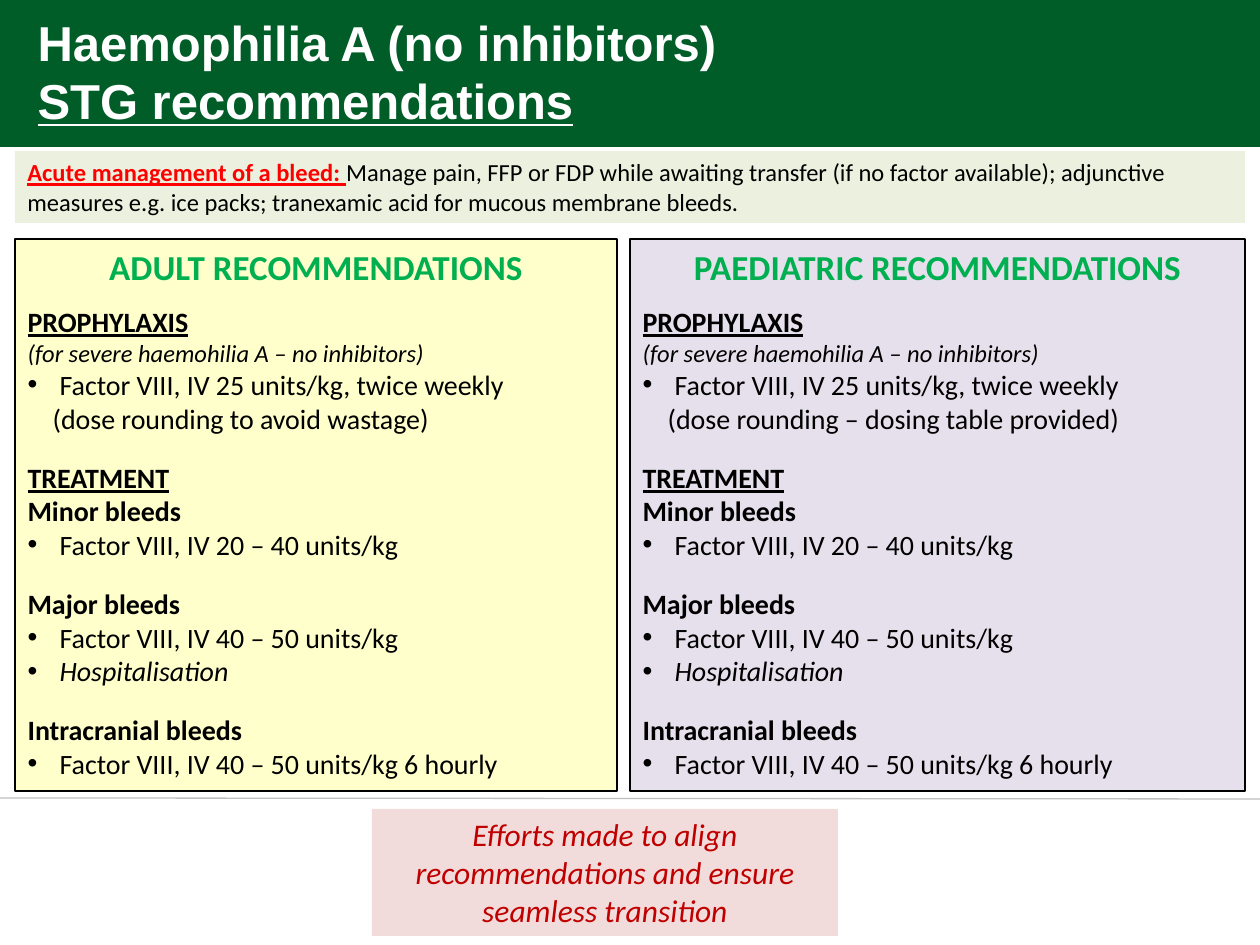
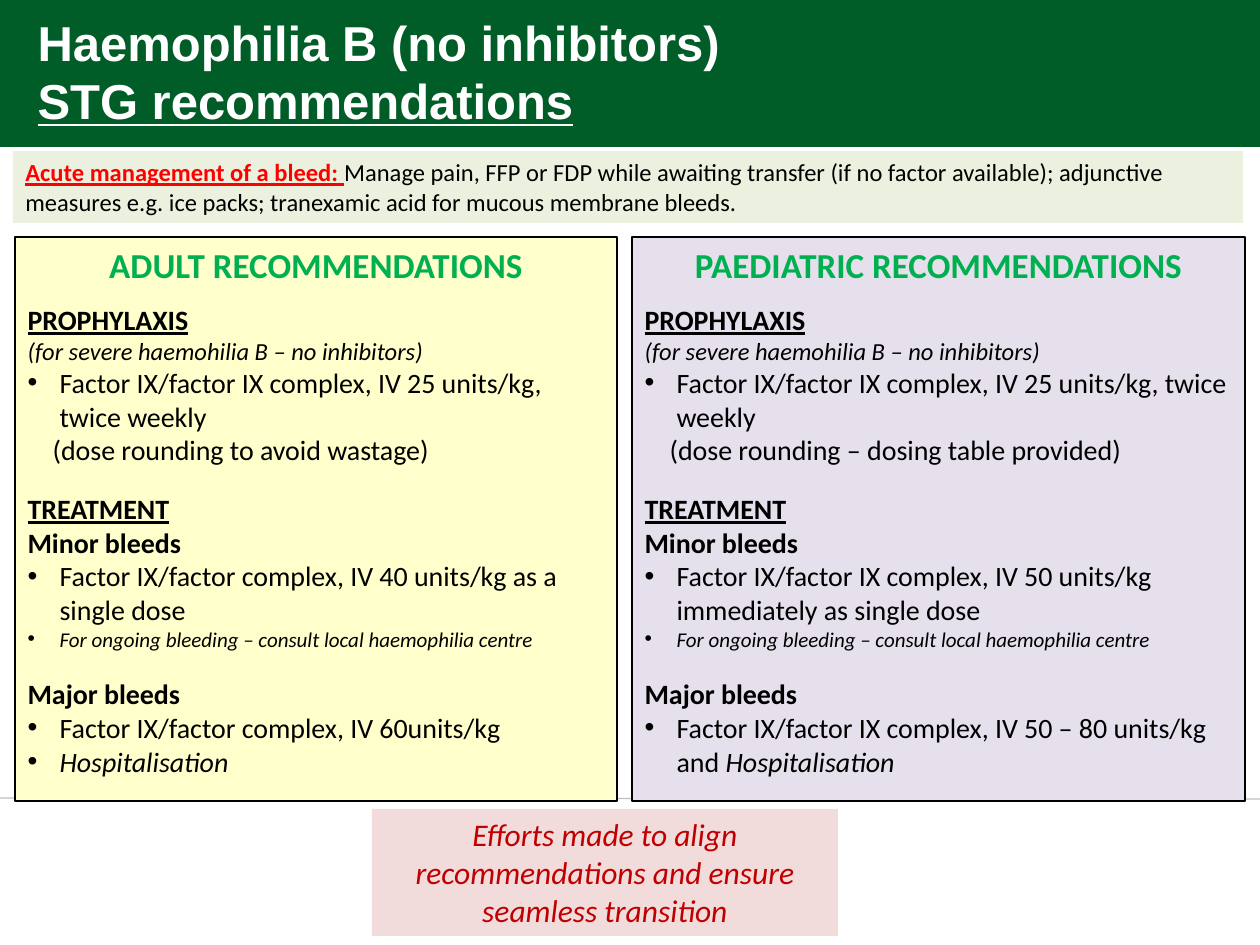
from dataclasses import dataclass

from lxml import etree
from pptx import Presentation
from pptx.dml.color import RGBColor
from pptx.enum.shapes import MSO_CONNECTOR, MSO_SHAPE
from pptx.enum.text import MSO_ANCHOR, MSO_AUTO_SIZE, PP_ALIGN
from pptx.oxml.ns import qn
from pptx.util import Emu, Pt

LEFT, CENTER = PP_ALIGN.LEFT, PP_ALIGN.CENTER
TOP, BOTTOM = MSO_ANCHOR.TOP, MSO_ANCHOR.BOTTOM
NO_AUTOSIZE = MSO_AUTO_SIZE.NONE
RECTANGLE, STRAIGHT = MSO_SHAPE.RECTANGLE, MSO_CONNECTOR.STRAIGHT

PX_PER_INCH = 126
SLIDE_W, SLIDE_H = 1260, 945
TWO_CONTENT = 3


@dataclass(frozen=True)
class Theme:
    band: str = "005D28"
    rule: str = "BFBFBF"
    white: str = "FFFFFF"
    black: str = "000000"
    alert: str = "FF0000"
    heading: str = "00B050"
    closing: str = "C00000"
    notice_fill: str = "EBF1DE"
    closing_fill: str = "F2DCDB"
    adult_fill: str = "FFFFCC"
    child_fill: str = "E6E0EC"
    title_font: str = "Arial"
    body_font: str = "Calibri"
    title_pt: int = 28
    heading_pt: int = 20
    closing_pt: int = 18
    body_pt: int = 16
    small_pt: int = 14
    fine_pt: int = 12
    heading_gap_pt: float = 9.8
    block_gap_pt: float = 14.6


T = Theme()

BODY = dict(name=T.body_font, size=T.body_pt, color=T.black)
ITALIC = BODY | dict(italic=True)
TITLE = dict(name=T.title_font, size=T.title_pt, color=T.white, bold=True)
SMALL = BODY | dict(size=T.small_pt)
ALERT = SMALL | dict(color=T.alert, bold=True, underline=True)
CLOSING = ITALIC | dict(size=T.closing_pt, color=T.closing)

LINE_STYLES = {
    "heading": BODY | dict(size=T.heading_pt, color=T.heading, bold=True),
    "section": BODY | dict(bold=True, underline=True),
    "group": BODY | dict(bold=True),
    "scope": ITALIC | dict(size=T.small_pt),
    "bullet": BODY,
    "italic bullet": ITALIC,
    "fine bullet": ITALIC | dict(size=T.fine_pt),
    "rounding": BODY,
}
BULLET_INDENT, ROUNDING_INDENT = 32, 25

NOTICE = (
    ("Acute management of a bleed: ", ALERT),
    ("Manage pain, FFP or FDP while awaiting transfer (if no factor available); "
     "adjunctive measures e.g. ice packs; tranexamic acid for mucous membrane "
     "bleeds.", SMALL),
)
ALIGNMENT_NOTE = ("Efforts made to align recommendations and ensure "
                  "seamless transition")

ROUNDING = {"ADULT": "(dose rounding to avoid wastage)",
            "PAEDIATRIC": "(dose rounding – dosing table provided)"}
HOSPITAL = ("italic bullet", "Hospitalisation")
ONGOING = ("fine bullet", "For ongoing bleeding – consult local haemophilia centre")

TREATMENT_A = [
    ("group", "Minor bleeds"),
    ("bullet", "Factor VIII, IV 20 – 40 units/kg"),
    ("group", "Major bleeds"),
    ("bullet", "Factor VIII, IV 40 – 50 units/kg"),
    HOSPITAL,
    ("group", "Intracranial bleeds"),
    ("bullet", "Factor VIII, IV 40 – 50 units/kg 6 hourly"),
]
TREATMENT_B_ADULT = [
    ("group", "Minor bleeds"),
    ("bullet", "Factor IX/factor complex, IV 40 units/kg as a single dose"),
    ONGOING,
    ("group", "Major bleeds"),
    ("bullet", "Factor IX/factor complex, IV 60units/kg"),
    HOSPITAL,
]
TREATMENT_B_CHILD = [
    ("group", "Minor bleeds"),
    ("bullet", "Factor IX/factor IX complex, IV 50 units/kg immediately as single dose"),
    ONGOING,
    ("group", "Major bleeds"),
    ("bullet", "Factor IX/factor IX complex, IV 50 – 80 units/kg and ",
     "Hospitalisation"),
]

SLIDES = [
    dict(disease="A", factor="Factor VIII", notice_x=15, top=239, height=552,
         child_x=630, adult=TREATMENT_A, child=TREATMENT_A),
    dict(disease="B", factor="Factor IX/factor IX complex", notice_x=13, top=237,
         height=564, child_x=632, adult=TREATMENT_B_ADULT, child=TREATMENT_B_CHILD),
]
ADULT_X, ADULT_W, PANEL_RIGHT = 15, 602, 1245


def px(n):
    return Emu(round(n * 914400 / PX_PER_INCH))


def rgb(value):
    return RGBColor.from_string(value)


def place(sp, x, y, w, h):
    sp.left, sp.top, sp.width, sp.height = map(px, (x, y, w, h))


def add_run(p, text, style):
    r = p.add_run()
    r.text = text
    for name, value in style.items():
        if name == "color":
            r.font.color.rgb = rgb(value)
        else:
            setattr(r.font, name, Pt(value) if name == "size" else value)


def set_frame(sp, anchor=TOP):
    tf = sp.text_frame
    tf.word_wrap, tf.auto_size, tf.vertical_anchor = True, NO_AUTOSIZE, anchor
    return tf


def next_paragraph(tf, is_first):
    return tf.paragraphs[0] if is_first else tf.add_paragraph()


def set_indent(p, kind):
    """Give the paragraph its own bullet and indent in place of the template's."""
    pPr = p._p.get_or_add_pPr()
    if "bullet" in kind:
        margin, hanging = BULLET_INDENT, -BULLET_INDENT
        etree.SubElement(pPr, qn("a:buFont"), typeface="Arial")
        etree.SubElement(pPr, qn("a:buChar"), char="•")
    else:
        margin, hanging = (ROUNDING_INDENT if kind == "rounding" else 0), 0
        etree.SubElement(pPr, qn("a:buNone"))
    pPr.set("marL", str(px(margin)))
    pPr.set("indent", str(px(hanging)))


def gap_before(previous, kind):
    if previous == "heading":
        return T.heading_gap_pt
    if kind == "section" or (kind == "group" and previous != "section"):
        return T.block_gap_pt
    return 0


def add_box(slide, box, fill):
    sp = slide.shapes.add_shape(RECTANGLE, *map(px, box))
    sp.shadow.inherit = False
    sp.fill.solid()
    sp.fill.fore_color.rgb = rgb(fill)
    sp.line.fill.background()
    return sp


def add_text_box(slide, box, fill, runs, align=LEFT):
    p = set_frame(add_box(slide, box, fill)).paragraphs[0]
    p.alignment = align
    for text, style in runs:
        add_run(p, text, style)


def add_backdrop(slide):
    """Draw the title band and the footer rule behind the placeholders."""
    band = add_box(slide, (0, 0, SLIDE_W, 147), T.band)
    rule = slide.shapes.add_connector(STRAIGHT, *map(px, (0, 798, SLIDE_W, 799)))
    rule.line.color.rgb = rgb(T.rule)
    rule.line.width = Pt(0.75)
    etree.SubElement(rule._element.spPr, qn("a:effectLst"))
    for sp in (rule, band):
        slide.shapes._spTree.insert(2, sp._element)


def set_title(slide, disease):
    title = slide.shapes.title
    place(title, 25, 0, 1002, 136)
    tf = set_frame(title, BOTTOM)
    lines = [(f"Haemophilia {disease} (no inhibitors)", TITLE),
             ("STG recommendations", TITLE | dict(underline=True))]
    for i, (text, style) in enumerate(lines):
        p = next_paragraph(tf, i == 0)
        p.alignment = LEFT
        add_run(p, text, style)


def panel_lines(audience, disease, factor, treatment):
    return [
        ("heading", f"{audience} RECOMMENDATIONS"),
        ("section", "PROPHYLAXIS"),
        ("scope", f"(for severe haemohilia {disease} – no inhibitors)"),
        ("bullet", f"{factor}, IV 25 units/kg, twice weekly"),
        ("rounding", ROUNDING[audience]),
        ("section", "TREATMENT"),
        *treatment,
    ]


def fill_panel(sp, box, fill, lines):
    place(sp, *box)
    sp.fill.solid()
    sp.fill.fore_color.rgb = rgb(fill)
    sp.line.color.rgb = rgb(T.black)
    sp.line.width = Pt(1.5)
    tf = set_frame(sp)
    previous = None
    for kind, text, *italic_tail in lines:
        p = next_paragraph(tf, previous is None)
        set_indent(p, kind)
        p.alignment = CENTER if kind == "heading" else LEFT
        p.space_before = Pt(gap_before(previous, kind))
        add_run(p, text, LINE_STYLES[kind])
        for tail in italic_tail:
            add_run(p, tail, ITALIC)
        previous = kind


def add_recommendations(prs, disease, factor, notice_x, top, height, child_x,
                        adult, child):
    slide = prs.slides.add_slide(prs.slide_layouts[TWO_CONTENT])
    add_backdrop(slide)
    set_title(slide, disease)
    panels = [("ADULT", ADULT_X, ADULT_W, T.adult_fill, adult),
              ("PAEDIATRIC", child_x, PANEL_RIGHT - child_x, T.child_fill, child)]
    for idx, (audience, x, w, fill, treatment) in enumerate(panels, start=1):
        fill_panel(slide.placeholders[idx], (x, top, w, height), fill,
                   panel_lines(audience, disease, factor, treatment))
    add_text_box(slide, (372, 809, 466, 127), T.closing_fill,
                 [(ALIGNMENT_NOTE, CLOSING)], CENTER)
    add_text_box(slide, (notice_x, 151, 1230, 72), T.notice_fill, NOTICE)


def main():
    prs = Presentation()
    prs.slide_width, prs.slide_height = px(SLIDE_W), px(SLIDE_H)
    for content in SLIDES:
        add_recommendations(prs, **content)
    prs.save("out.pptx")


if __name__ == "__main__":
    main()
